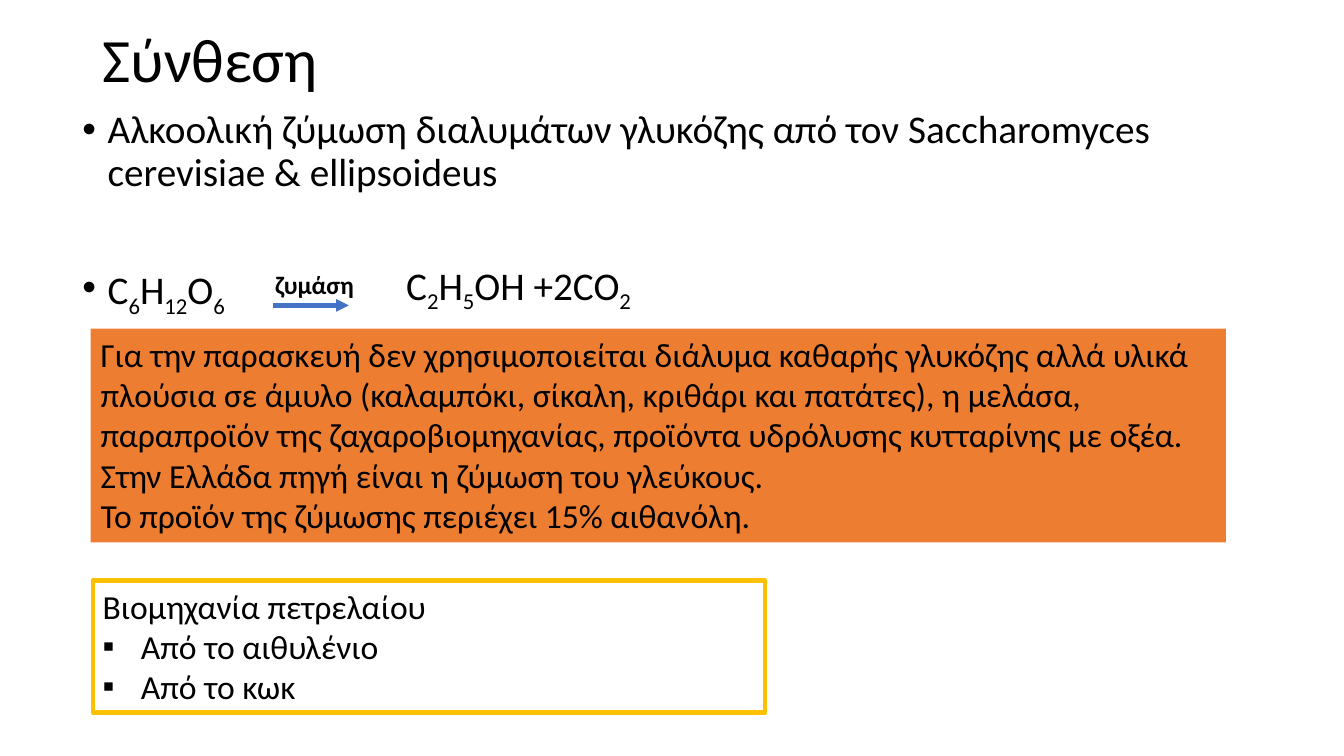
from lxml.etree import SubElement
from pptx import Presentation
from pptx.dml.color import RGBColor
from pptx.enum.shapes import MSO_CONNECTOR as CONN, MSO_SHAPE as SHAPE
from pptx.enum.text import MSO_ANCHOR as ANCHOR, MSO_AUTO_SIZE as FIT, PP_ALIGN as ALIGN
from pptx.oxml.ns import qn
from pptx.util import Inches, Pt

# Formulas alternate between normal and subscript parts.
TITLE = "Σύνθεση"
FERMENTATION = "Αλκοολική ζύμωση διαλυμάτων γλυκόζης από τον Saccharomyces cerevisiae & ellipsoideus"
GLUCOSE = ("C", "6", "H", "12", "O", "6")
ENZYME = "ζυμάση"
PRODUCTS = ("C", "2", "H", "5", "OH +2CO", "2")
SOURCES = [
    "Για την παρασκευή δεν χρησιμοποιείται διάλυμα καθαρής γλυκόζης αλλά υλικά "
    "πλούσια σε άμυλο (καλαμπόκι, σίκαλη, κριθάρι και πατάτες), η μελάσα, "
    "παραπροϊόν της ζαχαροβιομηχανίας, προϊόντα υδρόλυσης κυτταρίνης με οξέα. "
    "Στην Ελλάδα πηγή είναι η ζύμωση του γλεύκους.",
    "Το προϊόν της ζύμωσης περιέχει 15% αιθανόλη.",
]
PETROLEUM = ["Βιομηχανία πετρελαίου", "Από το αιθυλένιο", "Από το κωκ"]


class Theme:
    font = "Calibri"
    text = RGBColor(0x00, 0x00, 0x00)
    arrow = RGBColor(0x44, 0x72, 0xC4)
    panel = RGBColor(0xED, 0x7D, 0x31)
    frame = RGBColor(0xFF, 0xC0, 0x00)
    title, body, note, label = Pt(44), Pt(28), Pt(24), Pt(18)
    line = Pt(3)


def write(sp, paragraphs, size, bold=False, anchor=ANCHOR.TOP, fit=FIT.SHAPE_TO_FIT_TEXT):
    """Fill a shape; each paragraph is a string or a formula tuple."""
    tf = sp.text_frame
    tf.word_wrap = True
    tf.auto_size = fit
    tf.vertical_anchor = anchor
    for i, content in enumerate(paragraphs):
        p = tf.paragraphs[0] if i == 0 else tf.add_paragraph()
        p.alignment = ALIGN.LEFT
        parts = (content,) if isinstance(content, str) else content
        for j, part in enumerate(parts):
            r = p.add_run()
            r.text = part
            r.font.name = Theme.font
            r.font.size = size
            r.font.bold = bold
            r.font.color.rgb = Theme.text
            if j % 2:
                r.font._element.set("baseline", "-25000")
    return tf.paragraphs


def add_bullet(p, char, font, indent):
    pPr = p._p.get_or_add_pPr()
    pPr.set("marL", str(indent))
    pPr.set("indent", str(-indent))
    SubElement(pPr, qn("a:buFont"), typeface=font)
    SubElement(pPr, qn("a:buChar"), char=char)


def add_text(s, box, paragraphs, size, **options):
    sp = s.shapes.add_textbox(*map(Inches, box))
    return write(sp, paragraphs, size, **options)


def add_panel(s, box, paragraphs, fill=None, line=None):
    sp = s.shapes.add_shape(SHAPE.RECTANGLE, *map(Inches, box))
    sp.shadow.inherit = False
    if fill is None:
        sp.fill.background()
    else:
        sp.fill.solid()
        sp.fill.fore_color.rgb = fill
    if line is None:
        sp.line.fill.background()
    else:
        sp.line.color.rgb = line
        sp.line.width = Theme.line
    return write(sp, paragraphs, Theme.note)


def add_arrow(s, x1, x2, y):
    arrow = s.shapes.add_connector(CONN.STRAIGHT, Inches(x1), Inches(y), Inches(x2), Inches(y))
    arrow.line.color.rgb = Theme.arrow
    arrow.line.width = Theme.line
    SubElement(arrow.line._get_or_add_ln(), qn("a:tailEnd"), type="triangle")
    SubElement(arrow._element.spPr, qn("a:effectLst"))


def main():
    prs = Presentation()
    prs.slide_width, prs.slide_height = Inches(13.33), Inches(7.5)
    s = prs.slides.add_slide(prs.slide_layouts[6])

    heading, = add_text(s, (0.92, -0.1, 11.5, 1.45), [TITLE], Theme.title,
                        anchor=ANCHOR.MIDDLE, fit=FIT.NONE)
    heading.line_spacing = 0.9

    body = add_text(s, (0.72, 1.04, 11.64, 2.14), [FERMENTATION, GLUCOSE], Theme.body,
                    fit=FIT.NONE)
    for p, gap in zip(body, (10, 51)):
        p.line_spacing = 0.9
        p.space_before = Pt(gap)
        add_bullet(p, "•", "Arial", Inches(0.25))

    add_arrow(s, 2.71, 3.46, 3.03)
    add_text(s, (2.63, 2.62, 1.15, 0.4), [ENZYME], Theme.label, bold=True)
    add_text(s, (3.93, 2.54, 3.81, 0.57), [PRODUCTS], Theme.body)

    add_panel(s, (0.9, 3.26, 11.26, 2.12), SOURCES, fill=Theme.panel)
    petroleum = add_panel(s, (0.92, 5.76, 6.67, 1.31), PETROLEUM, line=Theme.frame)
    for p in petroleum[1:]:
        add_bullet(p, "▪", "Arial", Inches(0.38))

    prs.save("out.pptx")


if __name__ == "__main__":
    main()
